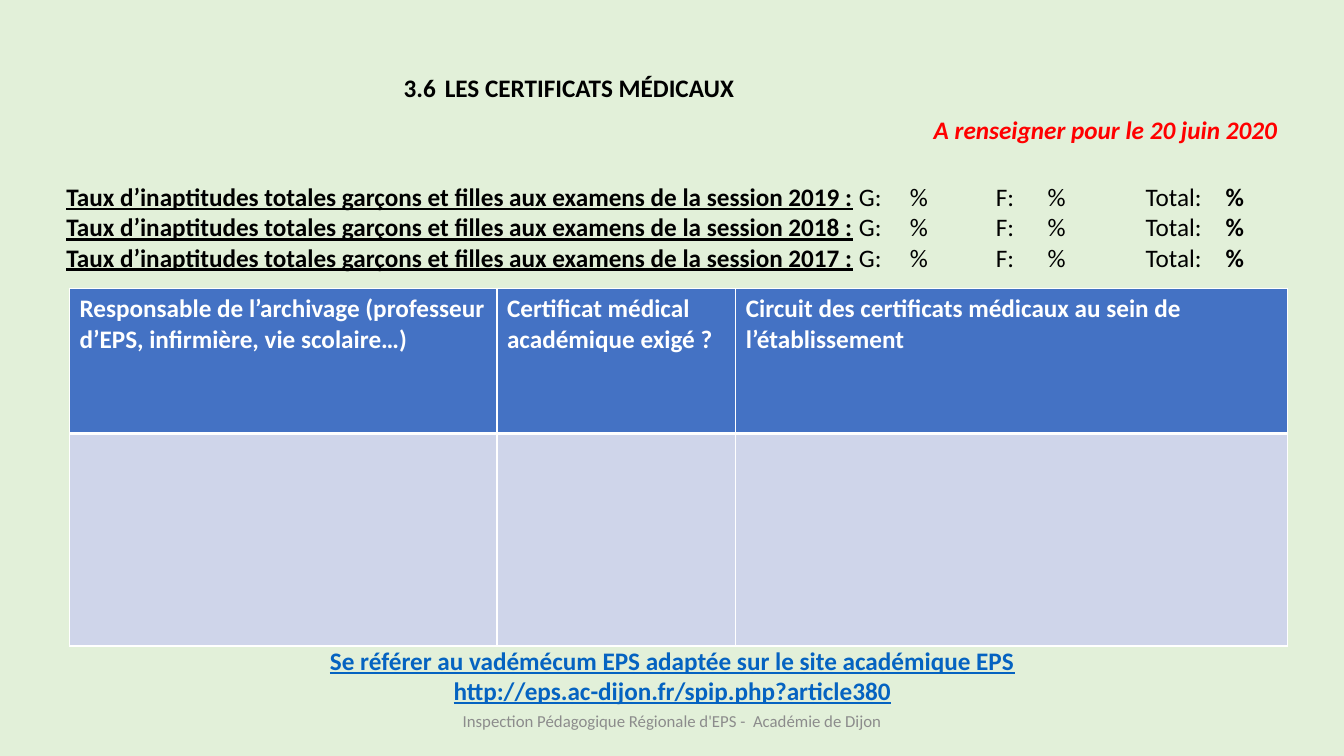
from pptx import Presentation
from pptx.dml.color import RGBColor
from pptx.enum.text import MSO_ANCHOR, PP_ALIGN
from pptx.oxml.ns import qn
from pptx.util import Pt
from lxml.etree import SubElement

THEME = {
    "font": "Calibri",
    "body": 18, "gap": 28, "footer": 12,
    "background": "E2F0D9", "ink": "000000", "alert": "FF0000",
    "link": "0563C1", "muted": "8C8C8C", "white": "FFFFFF",
    "header": "4472C4", "cell": "CFD5EA",
}

NUMBER, TITLE = "3.6", "LES CERTIFICATS MÉDICAUX"
DEADLINE = "A renseigner pour le 20 juin 2020"
RATE_LABEL = "Taux d’inaptitudes totales garçons et filles aux examens de la session {} :"
SESSIONS = [2019, 2018, 2017]
RATE_FIELDS = " G:\t%\tF:\t%\tTotal:\t"
RATE_TABS = [602.5, 664, 701, 771, 828]
HEADERS = [
    "Responsable de l’archivage (professeur d’EPS, infirmière, vie scolaire…)",
    "Certificat médical académique exigé ?",
    "Circuit des certificats médicaux au sein de l’établissement",
]
REFERENCE = [
    "Se référer au vadémécum EPS adaptée sur le site académique EPS",
    "http://eps.ac-dijon.fr/spip.php?article380",
]
FOOTER = "Inspection Pédagogique Régionale d'EPS -  Académie de Dijon"

SLIDE_SIZE = (960, 540)
TITLE_BOX = (269.3, 38.2, 650.1, 104.4)
TABLE_BOX = (49.7, 205.9, 869.8, 255.6)
RATES_BOX = (40.3, 126, 895, 116.6)
FOOTER_BOX = (318.2, 500.4, 324, 28.8)
REFERENCE_BOX = (68.4, 457.2, 823.7, 51.1)
COLUMN_WIDTHS = [305.3, 170.6, 393.9]
ROW_HEIGHTS = [103.7, 151.9]


def color(name):
    return RGBColor.from_string(THEME[name])


def add_span(para, text, tone="ink", size="body", bold=False, italic=False, underline=False):
    span = para.add_run()
    span.text = text
    font = span.font
    font.name, font.size = THEME["font"], Pt(THEME[size])
    font.bold, font.italic, font.underline = bold, italic, underline
    font.color.rgb = color(tone)


def add_box(page, place, count, align=PP_ALIGN.LEFT, anchor=MSO_ANCHOR.TOP):
    frame = page.shapes.add_textbox(*map(Pt, place)).text_frame
    frame.word_wrap = True
    frame.vertical_anchor = anchor
    paras = [frame.paragraphs[0]] + [frame.add_paragraph() for _ in range(count - 1)]
    for para in paras:
        para.alignment = align
    return paras


def set_tabs(para, stops):
    tab_list = SubElement(para._p.get_or_add_pPr(), qn("a:tabLst"))
    for stop in stops:
        SubElement(tab_list, qn("a:tab"), pos=str(int(Pt(stop))), algn="l")


def style_cell(cell, fill, bottom):
    properties = cell._tc.get_or_add_tcPr()
    for side, width in (("L", 1), ("R", 1), ("T", 1), ("B", bottom)):
        line = SubElement(properties, qn("a:ln" + side), w=str(int(Pt(width))))
        SubElement(SubElement(line, qn("a:solidFill")), qn("a:srgbClr"), val=THEME["white"])
    cell.fill.solid()
    cell.fill.fore_color.rgb = color(fill)


def add_title(page):
    heading, deadline = add_box(page, TITLE_BOX, 2)
    heading._p.get_or_add_pPr().set("marL", str(int(Pt(12))))
    add_span(heading, NUMBER, bold=True)
    add_span(heading, " ", size="gap", bold=True)
    add_span(heading, TITLE, bold=True)
    deadline.alignment = PP_ALIGN.RIGHT
    deadline.space_before = Pt(6)
    add_span(deadline, DEADLINE, "alert", bold=True, italic=True)


def add_certificates(page):
    table = page.shapes.add_table(len(ROW_HEIGHTS), len(HEADERS), *map(Pt, TABLE_BOX)).table
    for column, width in zip(table.columns, COLUMN_WIDTHS):
        column.width = Pt(width)
    for row, height, fill, bottom in zip(table.rows, ROW_HEIGHTS, ("header", "cell"), (3, 1)):
        row.height = Pt(height)
        for cell in row.cells:
            style_cell(cell, fill, bottom)
    for cell, text in zip(table.rows[0].cells, HEADERS):
        add_span(cell.text_frame.paragraphs[0], text, "white", bold=True)


def add_rates(page):
    for para, session in zip(add_box(page, RATES_BOX, len(SESSIONS)), SESSIONS):
        set_tabs(para, RATE_TABS)
        add_span(para, RATE_LABEL.format(session), bold=True, underline=True)
        add_span(para, RATE_FIELDS)
        add_span(para, "%", bold=True)


def main():
    deck = Presentation()
    deck.slide_width, deck.slide_height = map(Pt, SLIDE_SIZE)
    page = deck.slides.add_slide(deck.slide_layouts[6])
    page.background.fill.solid()
    page.background.fill.fore_color.rgb = color("background")
    add_title(page)
    add_certificates(page)
    add_rates(page)
    footer, = add_box(page, FOOTER_BOX, 1, PP_ALIGN.CENTER, MSO_ANCHOR.MIDDLE)
    add_span(footer, FOOTER, "muted", "footer")
    for para, text in zip(add_box(page, REFERENCE_BOX, len(REFERENCE), PP_ALIGN.CENTER), REFERENCE):
        add_span(para, text, "link", bold=True, underline=True)
    deck.save("out.pptx")


if __name__ == "__main__":
    main()
